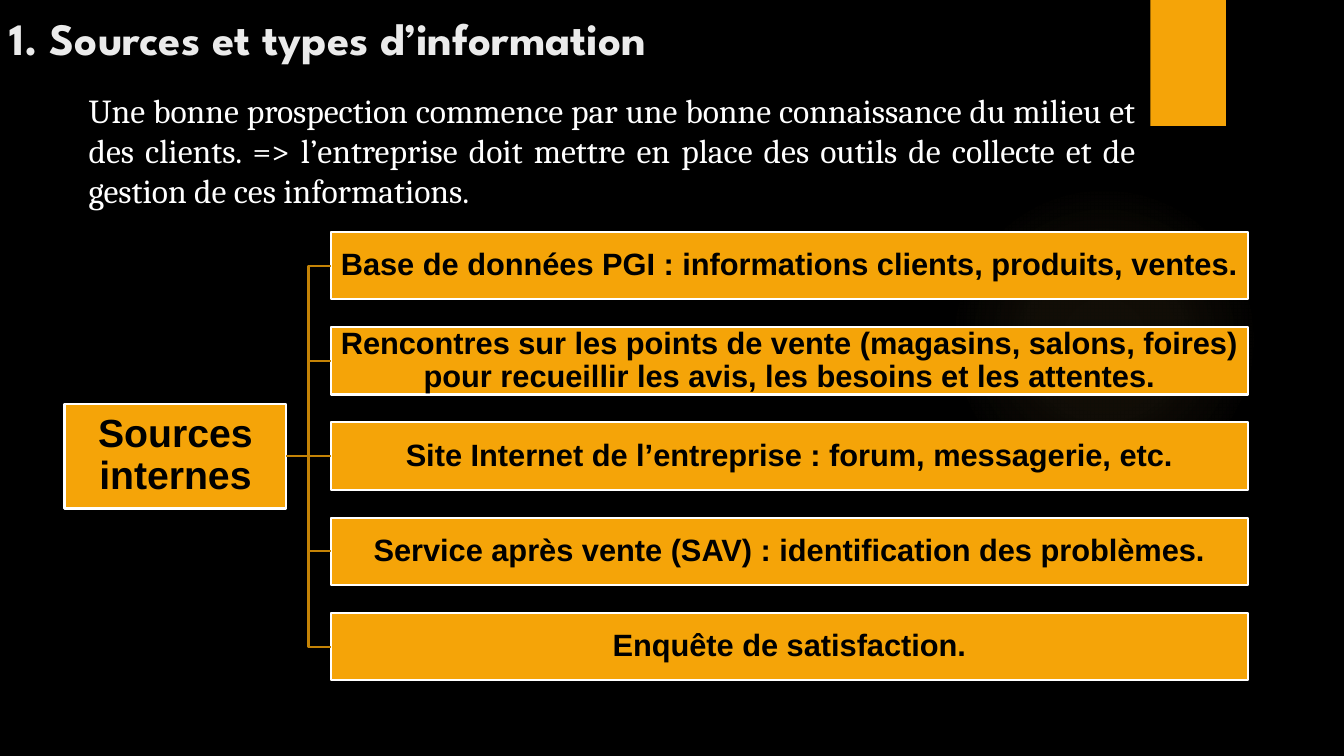
from dataclasses import dataclass

from lxml.etree import SubElement
from pptx import Presentation
from pptx.dml.color import RGBColor as RGB
from pptx.enum.shapes import MSO_CONNECTOR as Conn, MSO_SHAPE as Shape
from pptx.enum.text import MSO_ANCHOR as Anchor, PP_ALIGN as Align
from pptx.oxml import parse_xml
from pptx.oxml.ns import nsdecls, qn
from pptx.util import Inches, Pt


@dataclass(frozen=True)
class Theme:
    back: str = "000000"
    accent: str = "F5A408"
    glow: str = "FAC96A"
    link: str = "C48306"
    title: str = "EBEBEB"
    light: str = "FFFFFF"
    dark: str = "000000"
    title_font: str = "League Spartan"
    body_font: str = "Cambria"
    box_font: str = "Arial"
    title_size: int = 32
    body_size: int = 24
    root_size: int = 28
    leaf_size: int = 22
    line: float = 1.5


T = Theme()
LEAVES = [
    "Base de données PGI : informations clients, produits, ventes.",
    "Rencontres sur les points de vente (magasins, salons, foires) "
    "pour recueillir les avis, les besoins et les attentes.",
    "Site Internet de l’entreprise : forum, messagerie, etc.",
    "Service après vente (SAV) : identification des problèmes.",
    "Enquête de satisfaction.",
]


def inches(*lengths):
    return [Inches(n) for n in lengths]


def write(sp, text, font, size, color, bold=False, align=Align.LEFT, anchor=Anchor.TOP):
    tf = sp.text_frame
    tf.word_wrap = True
    tf.vertical_anchor = anchor
    p = tf.paragraphs[0]
    p.text = text
    p.alignment = align
    p.font.name = font
    p.font.size = Pt(size)
    p.font.bold = bold
    p.font.color.rgb = RGB.from_string(color)
    return tf


def add_solid(s, kind, box):
    sp = s.shapes.add_shape(kind, *inches(*box))
    sp.shadow.inherit = False
    sp.fill.solid()
    sp.fill.fore_color.rgb = RGB.from_string(T.accent)
    sp.line.fill.background()
    return sp


def add_glow(s, box):
    sp = add_solid(s, Shape.OVAL, box)
    stops = "".join(
        f'<a:gs pos="{pos * 1000}"><a:srgbClr val="{T.glow}">'
        f'<a:alpha val="{alpha * 1000}"/></a:srgbClr></a:gs>'
        for pos, alpha in [(0, 7), (36, 6), (69, 0)]
    )
    grad = parse_xml(
        f'<a:gradFill {nsdecls("a")}><a:gsLst>{stops}</a:gsLst><a:path path="circle">'
        '<a:fillToRect l="50000" t="50000" r="50000" b="50000"/></a:path></a:gradFill>'
    )
    pr = sp.element.spPr
    pr.replace(pr.find(qn("a:solidFill")), grad)


def add_tab(s, box):
    sp = add_solid(s, Shape.RECTANGLE, box)
    effects = sp.element.spPr.find(qn("a:effectLst"))
    effects.append(parse_xml(
        f'<a:outerShdw {nsdecls("a")} blurRad="{Pt(3)}" dist="{Pt(2)}" dir="5400000">'
        '<a:srgbClr val="000000"><a:alpha val="45000"/></a:srgbClr></a:outerShdw>'
    ))


def add_title(s, box):
    sp = s.shapes.add_textbox(*inches(*box))
    write(sp, "1. Sources et types d’information", T.title_font, T.title_size,
          T.title, bold=True, anchor=Anchor.BOTTOM)


def add_intro(s, box):
    sp = s.shapes.add_textbox(*inches(*box))
    write(sp, "Une bonne prospection commence par une bonne connaissance du milieu et "
          "des clients. => l’entreprise doit mettre en place des outils de collecte et "
          "de gestion de ces informations.", T.body_font, T.body_size, T.light,
          align=Align.JUSTIFY)


def add_node(s, box, text, size):
    sp = add_solid(s, Shape.RECTANGLE, box)
    sp.line.color.rgb = RGB.from_string(T.light)
    sp.line.width = Pt(T.line)
    tf = write(sp, text, T.box_font, size, T.dark, bold=True,
               align=Align.CENTER, anchor=Anchor.MIDDLE)
    tf.margin_left = tf.margin_right = tf.margin_top = tf.margin_bottom = Inches(0.02)
    tf.paragraphs[0].line_spacing = 0.9
    return sp


def add_link(s, root, leaf, kind):
    cx = s.shapes.add_connector(kind, 0, 0, 0, 0)
    cx.begin_connect(root, 3)
    cx.end_connect(leaf, 1)
    cx.line.color.rgb = RGB.from_string(T.link)
    cx.line.width = Pt(T.line)
    SubElement(cx.element.spPr, qn("a:effectLst"))


def add_tree(s, box):
    left, top, width, height = box
    root_w, root_h, gap, leaf_h = 2.2, 1.04, 0.44, 0.67
    step = (height - leaf_h) / (len(LEAVES) - 1)
    root = add_node(s, (left, top + (height - root_h) / 2, root_w, root_h),
                    "Sources internes", T.root_size)
    leaf_x = left + root_w + gap
    for i, text in enumerate(LEAVES):
        leaf = add_node(s, (leaf_x, top + i * step, width - root_w - gap, leaf_h),
                        text, T.leaf_size)
        middle = 2 * i == len(LEAVES) - 1
        add_link(s, root, leaf, Conn.STRAIGHT if middle else Conn.ELBOW)


def main():
    prs = Presentation()
    prs.slide_width, prs.slide_height = inches(13.33, 7.5)
    s = prs.slides.add_slide(prs.slide_layouts[6])
    s.background.fill.solid()
    s.background.fill.fore_color.rgb = RGB.from_string(T.back)
    add_glow(s, (9.41, 1.83, 3.08, 3.08))
    add_tab(s, (11.41, 0, 0.75, 1.25))
    add_title(s, (0, 0, 9.65, 0.69))
    add_intro(s, (0.78, 0.84, 10.58, 1.31))
    add_tree(s, (0.64, 2.3, 11.74, 4.45))
    prs.save("out.pptx")


if __name__ == "__main__":
    main()
